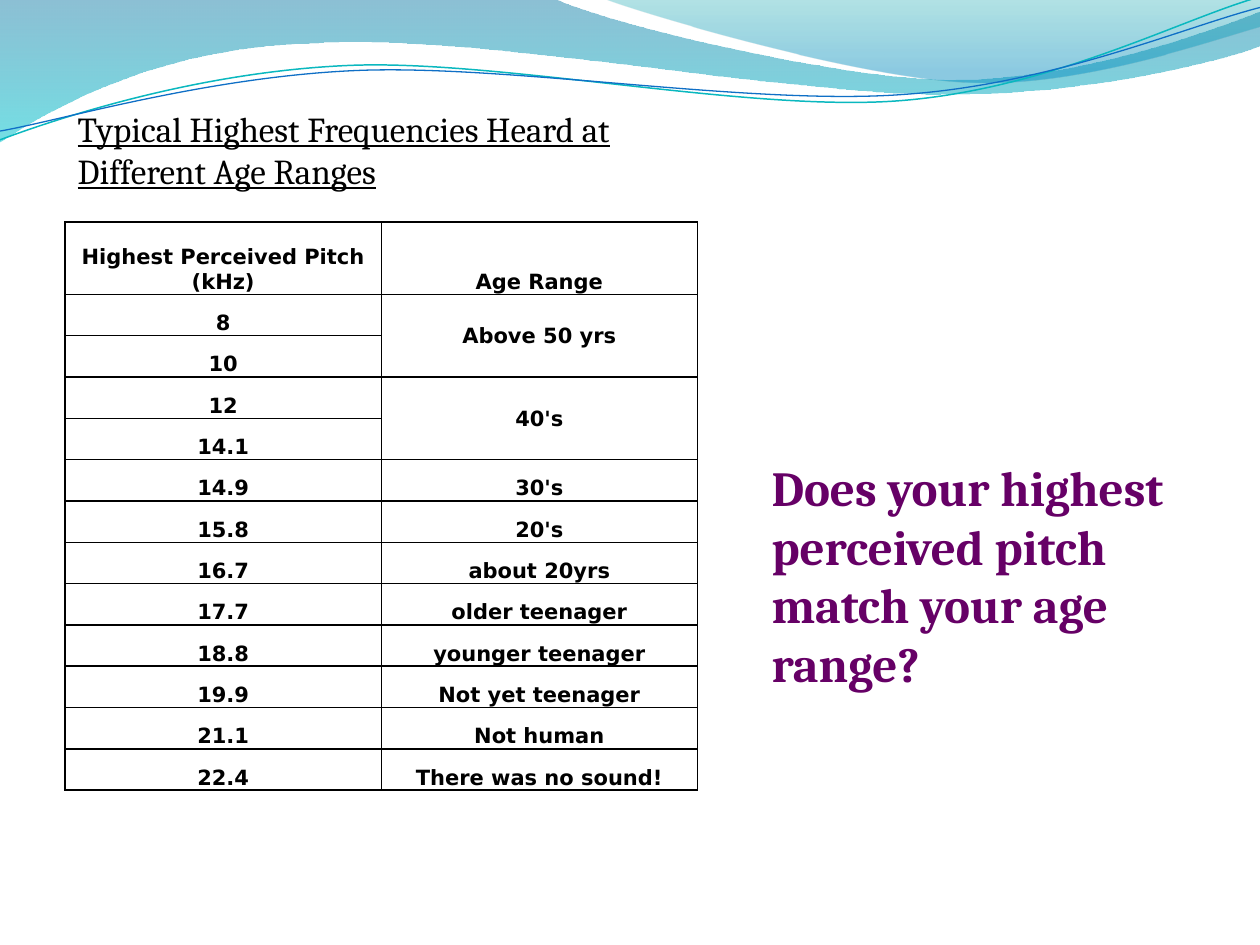
from dataclasses import dataclass
from math import cos, radians, sin
from typing import Any

from lxml.etree import SubElement
from pptx import Presentation
from pptx.dml.color import RGBColor
from pptx.enum.text import MSO_ANCHOR, MSO_AUTO_SIZE, PP_ALIGN
from pptx.oxml import parse_xml
from pptx.oxml.ns import nsdecls, qn
from pptx.util import Pt

Point = tuple[float, float]


@dataclass
class GradientStop:
    position: float
    color: str
    opacity: int


@dataclass
class Wave:
    start: Point
    segments: list[tuple[float, ...]]
    stops: tuple[GradientStop, ...] = ()
    line_color: str = ""
    line_width: float = 0
    center: Point = (0, 0)
    tilt: float = 0


@dataclass
class AgeRow:
    pitch: str
    age: str
    rows_spanned: int = 1


WAVES = [
    Wave((0, 0), [
        (316.8, -0.7),
        (342.7, 12.2, 478.1, 45.4, 545.8, 45.4),
        (614.2, 45.4, 689.8, 18.7, 720, 6.5),
        (720.7, 25.9),
        (707.8, 31.7, 626.4, 54.7, 537.1, 54),
        (447.8, 54, 275, 20.2, 185, 24.5),
        (92.9, 25.9, 33.1, 59.8, -0.7, 81.4),
    ], stops=(GradientStop(0, "0074A1", 45), GradientStop(1, "00C6CF", 55))),
    Wave((344.9, -0.7), [
        (366.5, 7.9, 491, 44.6, 553.7, 46.8),
        (616.3, 49.7, 691.9, 23, 720, 15.1),
        (720, 0),
    ], stops=(GradientStop(0, "00A1A9", 30), GradientStop(0.8, "008BBF", 45))),
    Wave((0, 79.9), [
        (34.6, 67, 113.8, 41, 199.4, 37.4),
        (284.4, 33.8, 427, 64.1, 513.4, 57.6),
        (599.8, 51.1, 675.4, 10.8, 718.6, -1.4),
    ], line_color="0AB8BF", line_width=0.85, center=(359.3, 41.4), tilt=-2.7),
    Wave((0, 74.9), [
        (33.8, 69.1, 118.1, 43.9, 203.8, 40.3),
        (290.2, 36.7, 429.8, 60.5, 516.2, 54),
        (601.9, 48.2, 677.5, 15.1, 720, 4.3),
    ], line_color="0F6FC6", line_width=0.75, center=(359.6, 42.5), tilt=-2.7),
]

AGE_ROWS = [
    AgeRow("Highest Perceived Pitch (kHz)", "Age Range"),
    AgeRow("8", "Above 50 yrs", 2),
    AgeRow("10", ""),
    AgeRow("12", "40's", 2),
    AgeRow("14.1", ""),
    AgeRow("14.9", "30's"),
    AgeRow("15.8", "20's"),
    AgeRow("16.7", "about 20yrs"),
    AgeRow("17.7", "older teenager"),
    AgeRow("18.8", "younger teenager"),
    AgeRow("19.9", "Not yet teenager"),
    AgeRow("21.1", "Not human"),
    AgeRow("22.4", "There was no sound!"),
]

HEADER_HEIGHT = 41.4
ROW_HEIGHT = 23.62
COLUMN_WIDTH = 180.7

TITLE_FONT = {"name": "Cambria", "size": Pt(20), "underline": True, "bold": False}
QUESTION_FONT = {"name": "Cambria", "size": Pt(28), "bold": True}
CELL_FONT = {"name": "DejaVu Sans", "size": Pt(12), "bold": True}
CELL_MARGINS = {"margin_left": Pt(0.7), "margin_right": Pt(0.7),
                "margin_top": Pt(0.7), "margin_bottom": Pt(0)}
FRAME_FORMAT = {"word_wrap": True, "auto_size": MSO_AUTO_SIZE.NONE,
                "vertical_anchor": MSO_ANCHOR.TOP,
                "margin_top": Pt(3.6), "margin_bottom": Pt(3.6)}


def set_color(color_format: Any, color: str) -> None:
    color_format.rgb = RGBColor.from_string(color)


def apply_format(target: Any, values: dict[str, Any]) -> None:
    for name, value in values.items():
        setattr(target, name, value)


def write_text(frame: Any, text: str, font: dict[str, Any], color: str, alignment: Any) -> None:
    paragraph = frame.paragraphs[0]
    paragraph.alignment = alignment
    run = paragraph.add_run()
    run.text = text
    apply_format(run.font, font)
    set_color(run.font.color, color)


def fill_text_shape(shape: Any, text: str, font: dict[str, Any], color: str,
                    box: tuple[float, ...], side_margin: float) -> None:
    for name, value in zip(("left", "top", "width", "height"), box):
        setattr(shape, name, Pt(value))
    margins = {"margin_left": Pt(side_margin), "margin_right": Pt(side_margin)}
    apply_format(shape.text_frame, FRAME_FORMAT | margins)
    write_text(shape.text_frame, text, font, color, PP_ALIGN.LEFT)


def level_point(wave: Wave, point: Point) -> Point:
    angle = radians(-wave.tilt)
    x, y = point[0] - wave.center[0], point[1] - wave.center[1]
    return (Pt(wave.center[0] + x * cos(angle) - y * sin(angle)),
            Pt(wave.center[1] + x * sin(angle) + y * cos(angle)))


def bend_segments(shape: Any, segments: list[tuple[float, ...]]) -> None:
    lines = iter(list(shape.element.spPr.iter(qn("a:lnTo"))))
    for segment in segments:
        first = next(lines)
        if len(segment) == 6:
            curve = parse_xml(f'<a:cubicBezTo {nsdecls("a")}/>')
            first.addprevious(curve)
            for line in (first, next(lines), next(lines)):
                curve.append(line[0])
                line.getparent().remove(line)


def draw_wave(slide: Any, wave: Wave) -> None:
    points = [level_point(wave, pair) for segment in [wave.start, *wave.segments]
              for pair in zip(segment[::2], segment[1::2])]
    builder = slide.shapes.build_freeform(*points[0])
    builder.add_line_segments(points[1:], close=bool(wave.stops))
    shape = builder.convert_to_shape()
    bend_segments(shape, wave.segments)
    shape.shadow.inherit = False
    if not wave.stops:
        shape.rotation = wave.tilt
        shape.fill.background()
        set_color(shape.line.color, wave.line_color)
        shape.line.width = Pt(wave.line_width)
        return
    shape.line.fill.background()
    shape.fill.gradient()
    shape.fill.gradient_angle = 270
    elements = shape.element.spPr.iter(qn("a:gs"))
    for stop, element, values in zip(shape.fill.gradient_stops, elements, wave.stops):
        stop.position = values.position
        set_color(stop.color, values.color)
        SubElement(element[0], qn("a:alpha"), val=str(values.opacity * 1000))


def format_cell(cell: Any, text: str, anchor: Any) -> None:
    cell.fill.background()
    for index, side in enumerate(("lnL", "lnR", "lnT", "lnB")):
        cell._tc.get_or_add_tcPr().insert(index, parse_xml(
            f'<a:{side} {nsdecls("a")} w="{Pt(1)}"><a:solidFill>'
            f'<a:srgbClr val="000000"/></a:solidFill></a:{side}>'))
    apply_format(cell, CELL_MARGINS | {"vertical_anchor": anchor})
    if text:
        write_text(cell.text_frame, text, CELL_FONT, "000000", PP_ALIGN.CENTER)


def draw_age_table(slide: Any, rows: list[AgeRow]) -> None:
    height = HEADER_HEIGHT + ROW_HEIGHT * (len(rows) - 1)
    table = slide.shapes.add_table(len(rows), 2, Pt(37.2), Pt(126.8),
                                   Pt(2 * COLUMN_WIDTH), Pt(height)).table
    apply_format(table, {"first_row": False, "horz_banding": False})
    for column in table.columns:
        column.width = Pt(COLUMN_WIDTH)
    for index, row in enumerate(rows):
        table.rows[index].height = Pt(ROW_HEIGHT if index else HEADER_HEIGHT)
        spanning = row.rows_spanned > 1
        format_cell(table.cell(index, 0), row.pitch, MSO_ANCHOR.BOTTOM)
        format_cell(table.cell(index, 1), row.age,
                    MSO_ANCHOR.MIDDLE if spanning else MSO_ANCHOR.BOTTOM)
        if spanning:
            table.cell(index, 1).merge(table.cell(index + row.rows_spanned - 1, 1))


def main() -> None:
    presentation = Presentation()
    apply_format(presentation, {"slide_width": Pt(720), "slide_height": Pt(540)})
    slide = presentation.slides.add_slide(presentation.slide_layouts[5])
    for wave in WAVES:
        draw_wave(slide, wave)
    question_box = (439.5, 257.8, 236.9, 161.3)
    question = slide.shapes.add_textbox(*map(Pt, question_box))
    fill_text_shape(question, "Does your highest perceived pitch match your age range?",
                    QUESTION_FONT, "660066", question_box, 1.4)
    draw_age_table(slide, AGE_ROWS)
    fill_text_shape(slide.shapes.title, "Typical Highest Frequencies Heard at Different Age Ranges",
                    TITLE_FONT, "000000", (37.2, 57.6, 361.4, 55.4), 7.2)
    presentation.save("out.pptx")


if __name__ == "__main__":
    main()
